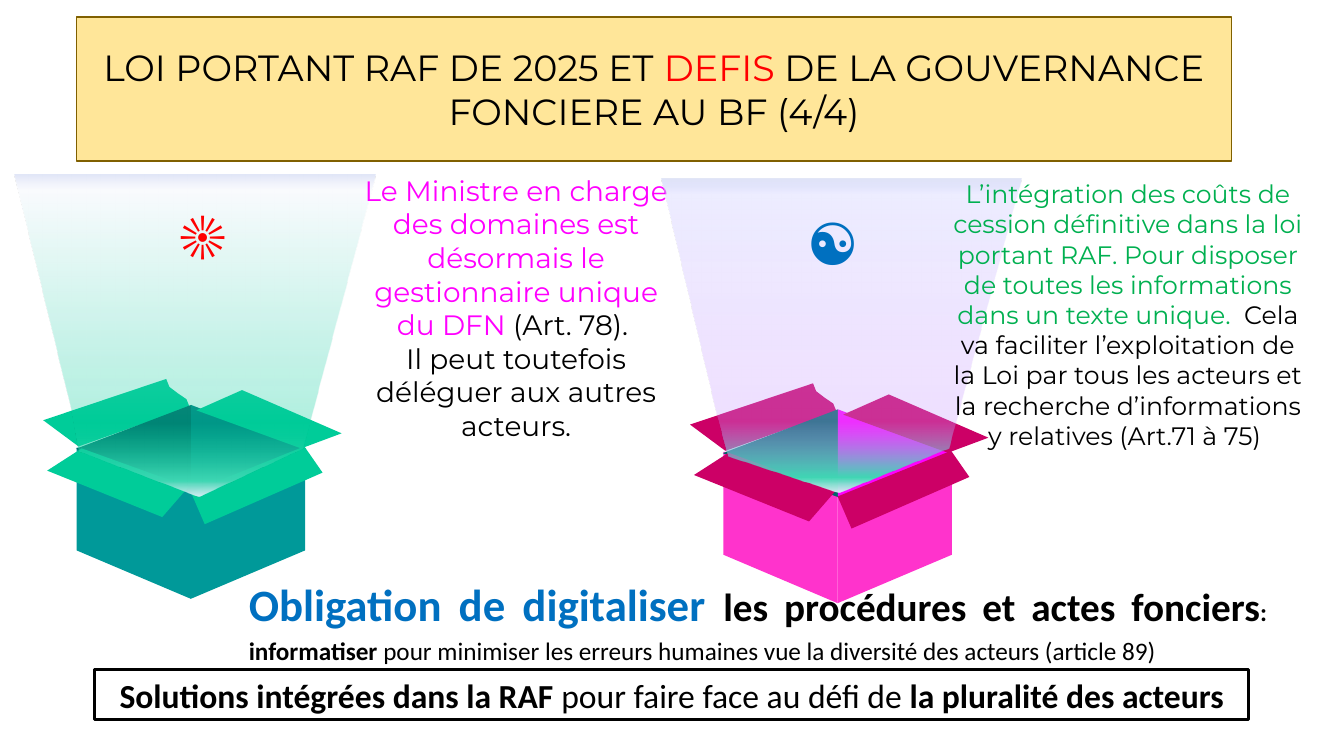
from dataclasses import dataclass

from lxml.etree import SubElement
from pptx import Presentation
from pptx.dml.color import RGBColor
from pptx.enum.shapes import MSO_SHAPE
from pptx.enum.text import MSO_ANCHOR, PP_ALIGN
from pptx.oxml.ns import qn
from pptx.shapes.autoshape import Shape
from pptx.util import Cm, Pt

COLORS = {
    "black": "000000", "red": "FF0000", "pink": "FF00FF", "leaf": "00B050",
    "blue": "0070C0", "sand": "FFE699", "brown": "806000",
    "mint": "00CC99", "teal": "009999", "pine": "006666", "sea": "008080",
    "wine": "CC0066", "rose": "FF33CC",
    "ice": "D8EBF7", "mist": "E0E5F7", "snow": "F0F3FC", "lilac": "CCCCFF",
    "mauve": "CC99FF", "jade": "40D7B4", "pale": "E8F1FC",
}

Points = list[tuple[float, float]]


@dataclass
class Box:
    """Open box: offset in cm, and colour names of its parts."""
    dx: float
    dy: float
    flap: str
    side: str
    right: str


@dataclass
class Beam:
    points: Points
    top: str
    low: str


@dataclass
class Run:
    text: str
    color: str = ""
    size: float = 0
    bold: bool | None = None


@dataclass
class Label:
    """Text area in cm; each inner list of runs is one paragraph."""
    area: tuple[float, float, float, float]
    lines: list[list[Run]]
    font: str
    size: float
    color: str = "black"
    align: PP_ALIGN = PP_ALIGN.CENTER
    wrap: bool = True


BACK_LEFT = [(4.78, 10.26), (1.98, 11.25), (1.09, 10.59), (4.19, 9.55),
             (4.27, 9.75), (4.48, 9.91), (4.7, 10.06)]
SIDES = [
    [(4.81, 11.28), (7.69, 11.28), (7.69, 13.87), (4.81, 15.09)],
    [(1.93, 11.28), (4.81, 11.28), (4.81, 15.09), (1.93, 13.87)],
]
FLAPS = [
    [(4.81, 12.4), (7.67, 11.25), (8.13, 11.91), (5.16, 13.21)],
    [(2.06, 11.3), (4.75, 12.27), (4.09, 13.03), (1.19, 11.86)],
    [(6.1, 9.83), (8.61, 10.92), (7.59, 11.3), (4.95, 10.34)],
]

GREEN = Box(0, 0, "mint", "teal", "sea")
PINK = Box(16.3, 0.11, "wine", "rose", "pink")
GREEN_BEAM = Beam([(0.36, 4.39), (1.83, 10.46), (1.98, 11.35), (5, 12.5),
                   (7.62, 11.28), (9.45, 4.39)], "snow", "mint")
PINK_BEAM = Beam([(16.66, 4.5), (18.06, 10.44), (18.34, 11.48), (21.13, 12.4),
                  (23.9, 11.28), (25.73, 4.5)], "lilac", "mauve")

SUN = Label((4.29, 4.83, 1.09, 2.13), [[Run("☀")]], "Calibri", 44, "red")
CHARGE = Label((8.69, 4.24, 8.64, 7.95), [
    [Run("Le Ministre en charge des domaines est désormais le gestionnaire "
         "unique du DFN ", "pink"), Run("(Art. 78). ")],
    [Run("Il peut toutefois déléguer aux autres acteurs.")],
], "Montserrat", 20)
COSTS = Label((23.7, 4.37, 9.45, 8.71), [[
    Run("L’intégration des coûts de cession définitive dans la loi portant "
        "RAF. Pour disposer de toutes les informations dans un texte "
        "unique.  ", "leaf"),
    Run("Cela va faciliter l’exploitation de la Loi par tous les acteurs et "
        "la recherche d’informations y relatives (Art.71 à 75) "),
]], "Montserrat", 18)
YIN = Label((20.14, 5.13, 1.75, 1.96), [[Run("☯")]], "Calibri", 40, "blue",
            PP_ALIGN.LEFT, False)
TITLE = Label((1.93, 0.43, 29.11, 3.63), [[
    Run("LOI PORTANT RAF DE 2025 ET "), Run("DEFIS", "red"),
    Run(" DE LA GOUVERNANCE FONCIERE AU BF (4/4)"),
]], "Montserrat", 26)
ANSWER = Label((2.39, 16.87, 29.08, 1.27), [[
    Run("Solutions intégrées dans la RAF", bold=True),
    Run(" pour faire face au défi de "),
    Run("la pluralité des acteurs", bold=True),
]], "Calibri", 24)
DUTY = Label((6.02, 14.2, 26.16, 2.67), [[
    Run("Obligation de digitaliser ", "blue", 32, True),
    Run("les procédures et actes fonciers", size=28, bold=True),
    Run(": informatiser ", bold=True),
    Run("pour minimiser les erreurs humaines vue la diversité des acteurs "
        "(article 89)"),
]], "Calibri", 18, align=PP_ALIGN.JUSTIFY)


def rgb(name: str) -> RGBColor:
    return RGBColor.from_string(COLORS[name])


def paint(shape: Shape, color: str) -> None:
    """Give a plain fill with no line and no shadow."""
    shape.shadow.inherit = False
    shape.fill.solid()
    shape.fill.fore_color.rgb = rgb(color)
    shape.line.fill.background()


def trace(shapes, points: Points, color: str, dx: float = 0, dy: float = 0) -> Shape:
    spots = [(Cm(x + dx), Cm(y + dy)) for x, y in points]
    pen = shapes.build_freeform(*spots[0])
    pen.add_line_segments(spots[1:], close=True)
    shape = pen.convert_to_shape()
    paint(shape, color)
    return shape


def draw_box(shapes, box: Box) -> None:
    group = shapes.add_group_shape().shapes
    trace(group, BACK_LEFT, box.flap, box.dx, box.dy)
    for side in SIDES:
        trace(group, side, box.side, box.dx, box.dy)
    for left, turn, color in ((2.26, 270, "pine"), (5.16, 90, box.right)):
        inner = group.add_shape(MSO_SHAPE.ISOSCELES_TRIANGLE, Cm(left + box.dx),
                                Cm(9.86 + box.dy), Cm(2.21), Cm(2.9))
        inner.rotation = turn
        paint(inner, color)
    for flap in FLAPS:
        trace(group, flap, box.flap, box.dx, box.dy)


def draw_beam(shapes, beam: Beam) -> None:
    shape = trace(shapes, beam.points, beam.low)
    shape.fill.gradient()
    shape.fill.gradient_angle = 270
    stops = shape.element.spPr.find(".//" + qn("a:gsLst"))
    for old in list(stops):
        stops.remove(old)
    for spot, color, alpha in ((0, "ice", 100), (0, "mist", 100),
                               (5, beam.top, 35), (77, beam.low, 30),
                               (95, "jade", 100), (100, "pale", 93)):
        stop = SubElement(stops, qn("a:gs"), pos=str(spot * 1000))
        tint = SubElement(stop, qn("a:srgbClr"), val=COLORS[color])
        SubElement(tint, qn("a:alpha"), val=str(alpha * 1000))


def write(shape: Shape, label: Label) -> None:
    frame = shape.text_frame
    frame.word_wrap = label.wrap
    for i, runs in enumerate(label.lines):
        para = frame.add_paragraph() if i else frame.paragraphs[0]
        para.alignment = label.align
        para.font.name = label.font
        para.font.size = Pt(label.size)
        para.font.color.rgb = rgb(label.color)
        for item in runs:
            run = para.add_run()
            run.text = item.text
            if item.color:
                run.font.color.rgb = rgb(item.color)
            if item.size:
                run.font.size = Pt(item.size)
            if item.bold:
                run.font.bold = True


def add_text(shapes, label: Label) -> Shape:
    shape = shapes.add_textbox(*map(Cm, label.area))
    write(shape, label)
    return shape


def add_panel(shapes, label: Label, fill: str, line: str, width: float) -> None:
    """Add a framed text; an empty fill name leaves it clear."""
    shape = shapes.add_shape(MSO_SHAPE.RECTANGLE, *map(Cm, label.area))
    shape.shadow.inherit = False
    if fill:
        shape.fill.solid()
        shape.fill.fore_color.rgb = rgb(fill)
    else:
        shape.fill.background()
    shape.line.color.rgb = rgb(line)
    shape.line.width = Pt(width)
    shape.text_frame.vertical_anchor = MSO_ANCHOR.MIDDLE
    write(shape, label)


def main() -> None:
    deck = Presentation()
    deck.slide_width, deck.slide_height = Cm(33.87), Cm(19.05)
    shapes = deck.slides.add_slide(deck.slide_layouts[6]).shapes
    draw_box(shapes, GREEN)
    draw_beam(shapes, GREEN_BEAM)
    add_text(shapes, SUN)
    add_text(shapes, CHARGE)
    draw_box(shapes, PINK)
    draw_beam(shapes, PINK_BEAM)
    add_text(shapes, COSTS)
    add_text(shapes, YIN)
    add_panel(shapes, TITLE, "sand", "brown", 1)
    add_panel(shapes, ANSWER, "", "black", 2.25)
    duty = add_text(shapes, DUTY).text_frame.paragraphs[0]
    duty.line_spacing = 1.15
    duty.space_after = Pt(6)
    deck.save("out.pptx")


if __name__ == "__main__":
    main()
